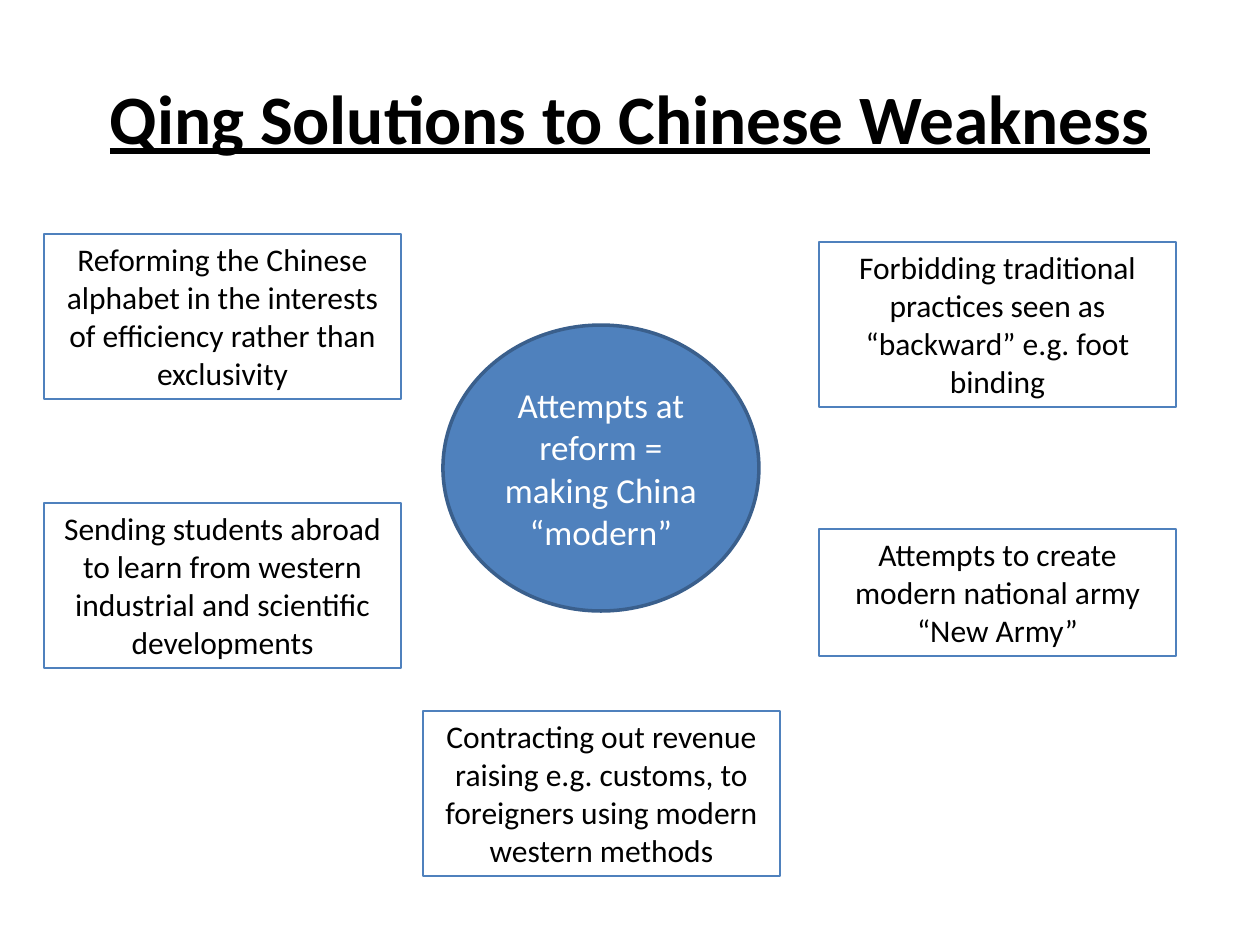
"""Build the slide on Qing solutions to Chinese weakness."""
from pptx import Presentation
from pptx.dml.color import RGBColor
from pptx.enum.shapes import MSO_SHAPE
from pptx.enum.text import MSO_ANCHOR, MSO_AUTO_SIZE, PP_ALIGN
from pptx.util import Inches, Pt

BLACK = RGBColor(0x00, 0x00, 0x00)
WHITE = RGBColor(0xFF, 0xFF, 0xFF)
BLUE = RGBColor(0x4F, 0x81, 0xBD)
DARK_BLUE = RGBColor(0x3A, 0x5F, 0x8C)
FONT = "Calibri"
SOLUTION_WIDTH = 357
LEFT_COLUMN, MIDDLE_COLUMN, RIGHT_COLUMN = 44, 423, 819


def px(*lengths):
    return [round(length * Inches(1) / 126) for length in lengths]


def write(shape, text, size, color, anchor):
    frame = shape.text_frame
    frame.word_wrap = True
    frame.vertical_anchor = anchor
    para = frame.paragraphs[0]
    para.alignment = PP_ALIGN.CENTER
    span = para.add_run()
    span.text = text
    span.font.name = FONT
    span.font.size = Pt(size)
    span.font.color.rgb = color
    return span


deck = Presentation()
deck.slide_width, deck.slide_height = px(1260, 945)
page = deck.slides.add_slide(deck.slide_layouts[6])

title = page.shapes.add_textbox(*px(63, 38, 1134, 157))
heading = write(title, "Qing Solutions to Chinese Weakness", 39.6, BLACK, MSO_ANCHOR.MIDDLE)
heading.font.bold = True
heading.font.underline = True

center = page.shapes.add_shape(MSO_SHAPE.OVAL, *px(443, 325, 316, 286))
center.shadow.inherit = False
center.fill.solid()
center.fill.fore_color.rgb = BLUE
center.line.color.rgb = DARK_BLUE
center.line.width = Pt(2)
write(center, "Attempts at reform = making China “modern”", 20, WHITE, MSO_ANCHOR.MIDDLE)

solutions = [
    (LEFT_COLUMN, 234, 165, "Reforming the Chinese alphabet in the interests of efficiency rather than exclusivity"),
    (LEFT_COLUMN, 503, 165, "Sending students abroad to learn from western industrial and scientific developments"),
    (MIDDLE_COLUMN, 711, 165, "Contracting out revenue raising e.g. customs, to foreigners using modern western methods"),
    (RIGHT_COLUMN, 242, 165, "Forbidding traditional practices seen as “backward” e.g. foot binding"),
    (RIGHT_COLUMN, 529, 127, "Attempts to create modern national army “New Army”"),
]
for left, top, height, text in solutions:
    box = page.shapes.add_shape(MSO_SHAPE.RECTANGLE, *px(left, top, SOLUTION_WIDTH, height))
    box.shadow.inherit = False
    box.fill.background()
    box.line.color.rgb = BLUE
    box.line.width = Pt(0.75)
    write(box, text, 18, BLACK, MSO_ANCHOR.TOP)
    box.text_frame.auto_size = MSO_AUTO_SIZE.SHAPE_TO_FIT_TEXT

deck.save("out.pptx")
